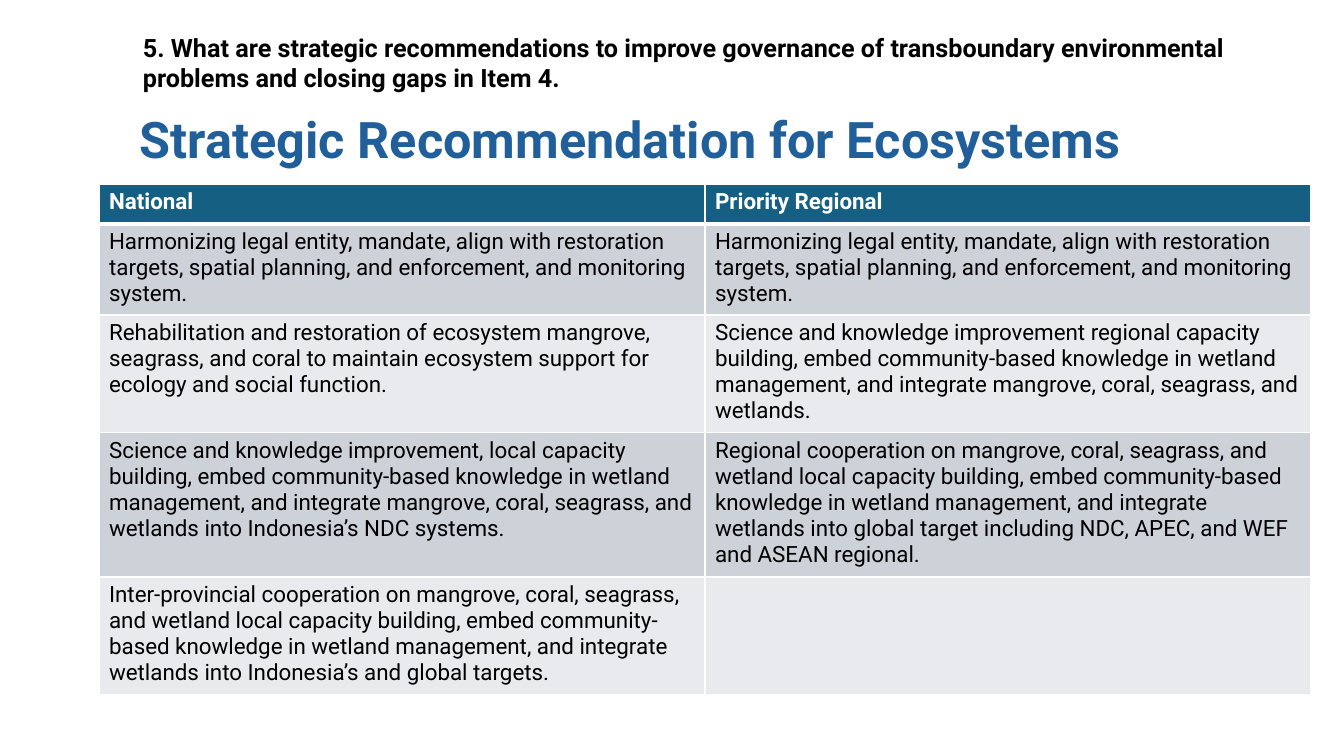
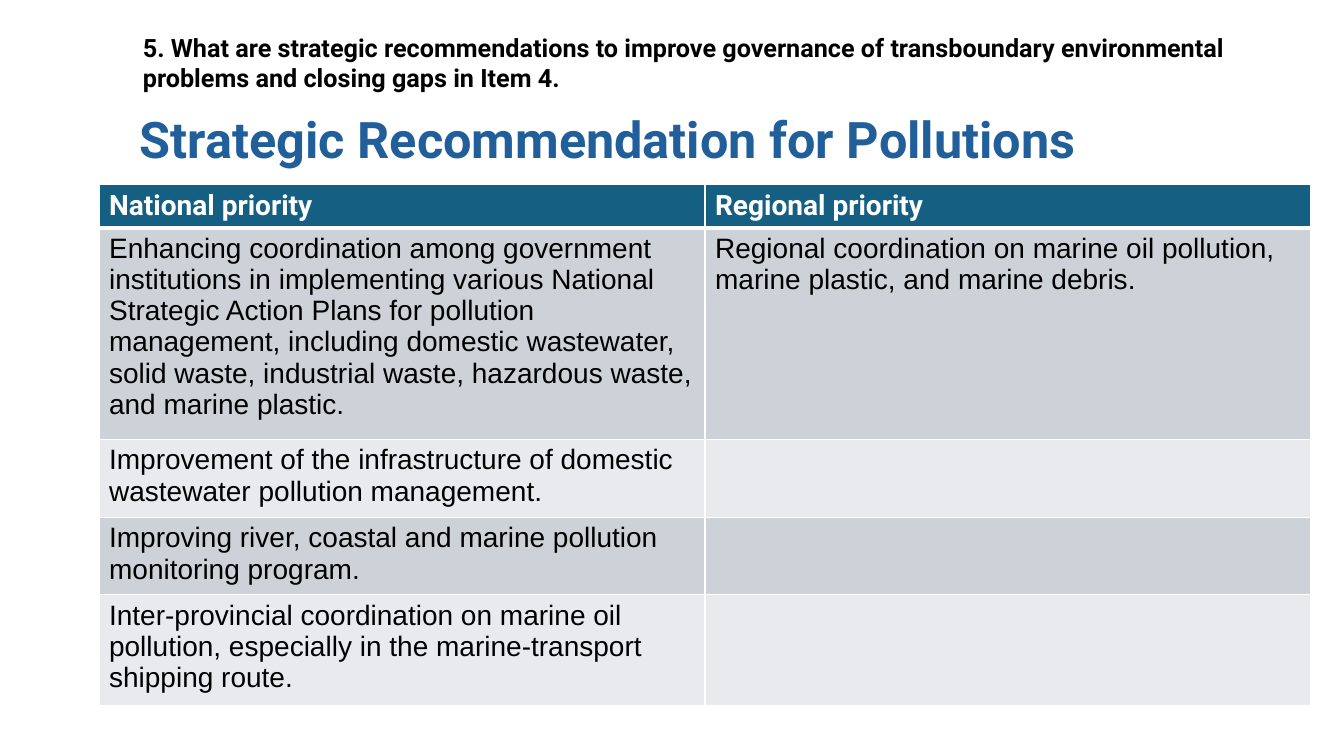
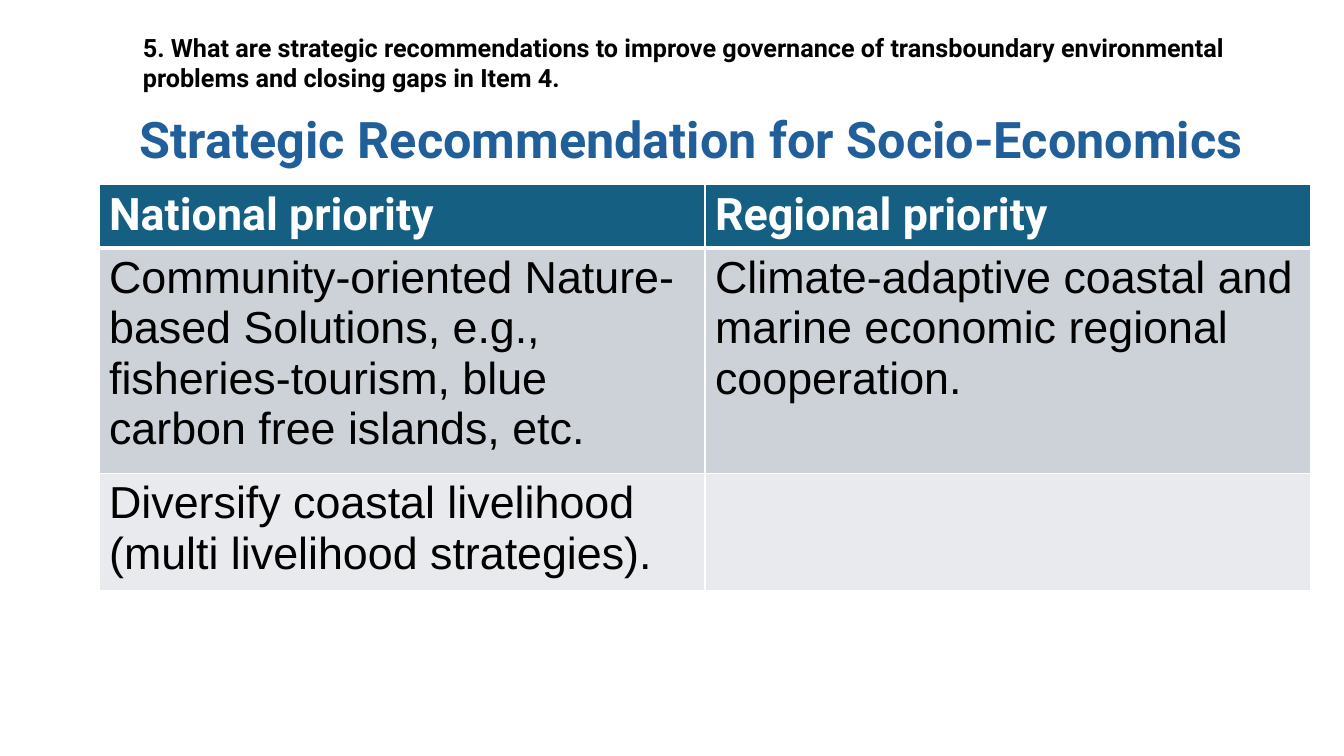
from dataclasses import dataclass

from lxml.etree import SubElement
from pptx import Presentation
from pptx.dml.color import RGBColor
from pptx.enum.text import MSO_ANCHOR, MSO_AUTO_SIZE as AUTO
from pptx.oxml.ns import qn
from pptx.util import Emu, Pt


@dataclass(frozen=True)
class Theme:
    title: str = "215F9A"
    text: str = "000000"
    white: str = "FFFFFF"
    header: str = "156082"
    bands: tuple = ("CCD2D8", "E8EAED")
    head_font: str = "Roboto"
    body_font: str = "Arial"
    title_size: int = 36
    question_size: int = 18
    grid_line: int = 1
    header_line: int = 3


T = Theme()
PX = 914400 / 100.8


def write(tf, text, size, font=T.head_font, color=T.text, bold=False, spacing=None):
    tf.word_wrap = True
    p = tf.paragraphs[0]
    if spacing:
        p.line_spacing = spacing
    r = p.add_run()
    r.text = text
    r.font.size = Pt(size)
    r.font.name = font
    r.font.bold = bold
    r.font.color.rgb = RGBColor.from_string(color)


def set_borders(cell, **widths):
    tc_pr = cell._tc.get_or_add_tcPr()
    for side in ("L", "R", "T", "B"):
        width = Pt(widths.get(side, T.grid_line))
        ln = SubElement(tc_pr, qn(f"a:ln{side}"), w=str(int(width)))
        fill = SubElement(ln, qn("a:solidFill"))
        SubElement(fill, qn("a:srgbClr"), val=T.white)


QUESTION = (
    "5. What are strategic recommendations to improve governance of "
    "transboundary environmental problems and closing gaps in Item 4."
)
HARMONIZING = (
    "Harmonizing legal entity, mandate, align with restoration targets, "
    "spatial planning, and enforcement, and monitoring system."
)

SLIDES = [
    {
        "topic": "Ecosystems",
        "size": 16,
        "font": T.head_font,
        "heights": [40, 91, 117, 144, 118],
        "rows": [
            ("National", "Priority Regional"),
            (HARMONIZING, HARMONIZING),
            (
                "Rehabilitation and restoration of ecosystem mangrove, seagrass, and "
                "coral to maintain ecosystem support for ecology and social function.",
                "Science and knowledge improvement regional capacity building, embed "
                "community-based knowledge in wetland management, and integrate "
                "mangrove, coral, seagrass, and wetlands.",
            ),
            (
                "Science and knowledge improvement, local capacity building, embed "
                "community-based knowledge in wetland management, and integrate "
                "mangrove, coral, seagrass, and wetlands into Indonesia’s NDC systems.",
                "Regional cooperation on mangrove, coral, seagrass, and wetland local "
                "capacity building, embed community-based knowledge in wetland "
                "management, and integrate wetlands into global target including NDC, "
                "APEC, and WEF and ASEAN regional.",
            ),
            (
                "Inter-provincial cooperation on mangrove, coral, seagrass, and wetland "
                "local capacity building, embed community-based knowledge in wetland "
                "management, and integrate wetlands into Indonesia’s and global targets.",
                "",
            ),
        ],
    },
    {
        "topic": "Pollutions",
        "size": 20,
        "font": T.body_font,
        "heights": [43, 211, 78, 77, 111],
        "rows": [
            ("National priority", "Regional priority"),
            (
                "Enhancing coordination among government institutions in implementing "
                "various National Strategic Action Plans for pollution management, "
                "including domestic wastewater, solid waste, industrial waste, "
                "hazardous waste, and marine plastic.",
                "Regional coordination on marine oil pollution, marine plastic, and "
                "marine debris.",
            ),
            (
                "Improvement of the infrastructure of domestic wastewater pollution "
                "management.",
                "",
            ),
            ("Improving river, coastal and marine pollution monitoring program.", ""),
            (
                "Inter-provincial coordination on marine oil pollution, especially in "
                "the marine-transport shipping route.",
                "",
            ),
        ],
    },
    {
        "topic": "Socio-Economics",
        "size": 32,
        "font": T.body_font,
        "heights": [63, 225, 117],
        "rows": [
            ("National priority", "Regional priority"),
            (
                "Community-oriented Nature-based Solutions, e.g., fisheries-tourism, "
                "blue carbon free islands, etc.",
                "Climate-adaptive coastal and marine economic regional cooperation.",
            ),
            ("Diversify coastal livelihood (multi livelihood strategies).", ""),
        ],
    },
]

TITLE_BOX = [Emu(int(v * PX)) for v in (130, 110, 1159, 146)]
QUESTION_BOX = [Emu(int(v * PX)) for v in (133, 27, 1132, 72)]
TABLE_LEFT, TABLE_TOP, COLUMN = 99, 184, 606

prs = Presentation()
prs.slide_width = Emu(int(1344 * PX))
prs.slide_height = Emu(int(756 * PX))

for page in SLIDES:
    s = prs.slides.add_slide(prs.slide_layouts[6])

    tf = s.shapes.add_textbox(*TITLE_BOX).text_frame
    tf.vertical_anchor = MSO_ANCHOR.TOP
    write(tf, f"Strategic Recommendation for {page['topic']}", T.title_size,
          color=T.title, bold=True, spacing=0.9)

    tf = s.shapes.add_textbox(*QUESTION_BOX).text_frame
    write(tf, QUESTION, T.question_size, bold=True)
    tf.auto_size = AUTO.SHAPE_TO_FIT_TEXT

    rows, heights = page["rows"], page["heights"]
    frame = [Emu(int(v * PX)) for v in (TABLE_LEFT, TABLE_TOP, 2 * COLUMN, sum(heights))]
    table = s.shapes.add_table(len(rows), 2, *frame).table
    for column in table.columns:
        column.width = Emu(int(COLUMN * PX))

    for i, (row, height) in enumerate(zip(rows, heights)):
        table.rows[i].height = Emu(int(height * PX))
        header = i == 0
        for j, text in enumerate(row):
            cell = table.cell(i, j)
            set_borders(cell,
                        T=T.header_line if i == 1 else T.grid_line,
                        B=T.header_line if header else T.grid_line)
            cell.fill.solid()
            fill = T.header if header else T.bands[(i - 1) % 2]
            cell.fill.fore_color.rgb = RGBColor.from_string(fill)
            if text:
                write(cell.text_frame, text, page["size"],
                      font=T.head_font if header else page["font"],
                      color=T.white if header else T.text, bold=header)

prs.save("out.pptx")
